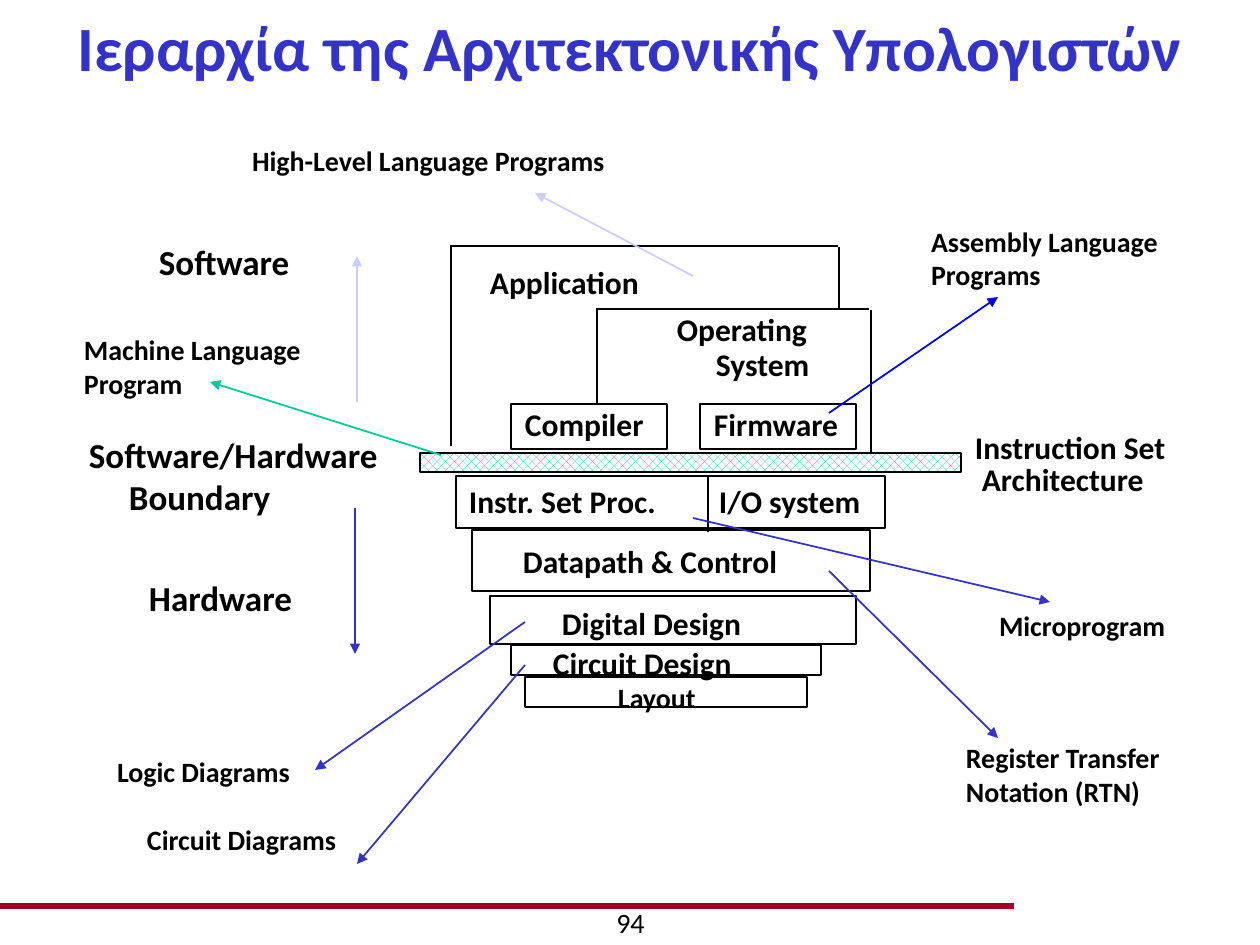
from lxml import etree
from pptx import Presentation
from pptx.dml.color import RGBColor
from pptx.enum.dml import MSO_PATTERN
from pptx.enum.shapes import MSO_CONNECTOR, MSO_SHAPE
from pptx.enum.text import MSO_ANCHOR, MSO_AUTO_SIZE, PP_ALIGN
from pptx.oxml.ns import qn
from pptx.util import Emu, Pt

STRAIGHT = MSO_CONNECTOR.STRAIGHT
RECTANGLE = MSO_SHAPE.RECTANGLE
DOTTED = MSO_PATTERN.PERCENT_50
CENTER, LEFT = PP_ALIGN.CENTER, PP_ALIGN.LEFT
TOP, MIDDLE = MSO_ANCHOR.TOP, MSO_ANCHOR.MIDDLE
GROW = MSO_AUTO_SIZE.SHAPE_TO_FIT_TEXT
FIXED = MSO_AUTO_SIZE.NONE

EMU_PER_PX = 914400 / 126
WIDTH, HEIGHT = 1260, 945
FONT = "Calibri"
BLACK, WHITE = "000000", "FFFFFF"
BLUE, BRIGHT_BLUE, LILAC = "3333CC", "0000FF", "CCCCFF"
GREEN, CRIMSON = "00CC99", "A50021"

LAYER_STYLE = {"margins": (9, 4), "spacing": 1.02}
BOUNDARY_STYLE = {"margins": (9, 4), "spacing": 0.85}
LEVEL_STYLE = {"size": 20}
NOTE_STYLE = {"size": 16}

LAYER_BOXES = [
    (456, 476, 429, 52),
    (511, 404, 156, 45),
    (700, 404, 156, 45),
    (472, 530, 398, 61),
    (490, 596, 366, 48),
    (511, 645, 310, 30),
    (525, 677, 282, 30),
]

OUTLINES = [
    (708, 476, 708, 532),
    (597, 404, 597, 308),
    (598, 309, 869, 309),
    (871, 310, 871, 455),
    (451, 446, 451, 245),
    (451, 246, 838, 246),
    (839, 247, 839, 308),
]

LABELS = [
    ("Application", (481, 258, 172, 45), LAYER_STYLE),
    ("Operating", (668, 305, 154, 45), LAYER_STYLE),
    ("System", (707, 340, 118, 45), LAYER_STYLE),
    ("Compiler", (516, 400, 144, 45), LAYER_STYLE),
    ("Firmware", (705, 400, 152, 45), LAYER_STYLE),
    ("Instr. Set Proc.", (460, 477, 212, 45), LAYER_STYLE),
    ("I/O system", (710, 477, 166, 45), LAYER_STYLE),
    ("Datapath & Control", (510, 536, 289, 50), {}),
    ("Digital Design", (553, 599, 204, 45), LAYER_STYLE),
    ("Circuit Design", (544, 639, 204, 45), LAYER_STYLE),
    ("Layout", (605, 675, 112, 47), NOTE_STYLE),
    ("Instruction Set\nArchitecture", (966, 430, 214, 72), BOUNDARY_STYLE | {"indent": 7}),
    ("Software", (146, 234, 164, 54), LEVEL_STYLE),
    ("Software/Hardware\nBoundary", (76, 427, 326, 97), LEVEL_STYLE | {"indent": 40}),
    ("Hardware", (136, 570, 174, 55), LEVEL_STYLE),
    ("High-Level Language Programs", (239, 138, 386, 47), NOTE_STYLE),
    ("Assembly Language\nPrograms", (918, 218, 258, 81), NOTE_STYLE),
    ("Machine Language\nProgram", (71, 327, 252, 81), NOTE_STYLE),
    ("Microprogram", (986, 602, 198, 47), NOTE_STYLE),
    ("Register Transfer\nNotation (RTN)", (953, 735, 226, 81), NOTE_STYLE),
    ("Logic Diagrams", (104, 749, 206, 47), NOTE_STYLE),
    ("Circuit Diagrams", (134, 817, 220, 47), NOTE_STYLE),
]

ARROWS = [
    ((693, 276, 535, 193), LILAC),
    ((357, 402, 357, 256), LILAC),
    ((829, 413, 998, 297), BRIGHT_BLUE),
    ((441, 455, 210, 382), GREEN),
    ((355, 508, 355, 654), BLUE),
    ((693, 518, 1050, 602), BLUE),
    ((829, 571, 998, 738), BLUE),
    ((525, 622, 315, 770), BLUE),
    ((525, 665, 357, 864), BLUE),
]


def px(length):
    return Emu(round(length * EMU_PER_PX))


def rgb(value):
    return RGBColor.from_string(value)


def set_all(target, values):
    for name, value in values.items():
        setattr(target, name, value)


def add_label(slide, text, place, size=18, color=BLACK, bold=True, align=LEFT,
              anchor=TOP, margins=(13, 6), spacing=None, indent=0, wrap=False):
    label = slide.shapes.add_textbox(*map(px, place))
    frame = label.text_frame
    side, edge = map(px, margins)
    set_all(frame, {
        "margin_left": side, "margin_right": side,
        "margin_top": edge, "margin_bottom": edge,
        "word_wrap": wrap, "vertical_anchor": anchor,
        "auto_size": FIXED if wrap else GROW,
    })
    frame.text = text
    for number, paragraph in enumerate(frame.paragraphs):
        if number and indent:
            paragraph._p.get_or_add_pPr().set("marL", str(px(indent)))
        set_all(paragraph, {"alignment": align, "line_spacing": spacing})
        for run in paragraph.runs:
            set_all(run.font, {"name": FONT, "size": Pt(size), "bold": bold})
            run.font.color.rgb = rgb(color)


def add_layer(slide, place, pattern_color=None):
    layer = slide.shapes.add_shape(RECTANGLE, *map(px, place))
    layer.shadow.inherit = False
    layer.line.color.rgb = rgb(BLACK)
    layer.line.width = Pt(1)
    if pattern_color:
        layer.fill.patterned()
        layer.fill.pattern = DOTTED
        layer.fill.fore_color.rgb = rgb(pattern_color)
        layer.fill.back_color.rgb = rgb(WHITE)
    else:
        layer.fill.background()


def add_line(slide, ends, color=BLACK, width=1, arrow=False):
    line = slide.shapes.add_connector(STRAIGHT, *map(px, ends))
    line.line.color.rgb = rgb(color)
    line.line.width = Pt(width)
    if arrow:
        etree.SubElement(line.line._get_or_add_ln(), qn("a:tailEnd"), type="triangle")
    etree.SubElement(line._element.spPr, qn("a:effectLst"))


def main():
    deck = Presentation()
    set_all(deck, {"slide_width": px(WIDTH), "slide_height": px(HEIGHT)})
    slide = deck.slides.add_slide(deck.slide_layouts[6])

    add_line(slide, (0, 906, 1014, 906), CRIMSON, 3)
    add_label(slide, "Ιεραρχία της Αρχιτεκτονικής Υπολογιστών", (63, 0, 1134, 92),
              size=36, color=BLUE, align=CENTER, anchor=MIDDLE, wrap=True)
    for place in LAYER_BOXES:
        add_layer(slide, place)
    for ends in OUTLINES:
        add_line(slide, ends)
    add_layer(slide, (420, 453, 541, 19), GREEN)
    for text, place, style in LABELS:
        add_label(slide, text, place, **style)
    for ends, color in ARROWS:
        add_line(slide, ends, color, arrow=True)
    add_label(slide, "94", (431, 900, 399, 50), size=16, bold=False, align=CENTER, wrap=True)

    deck.save("out.pptx")


if __name__ == "__main__":
    main()
